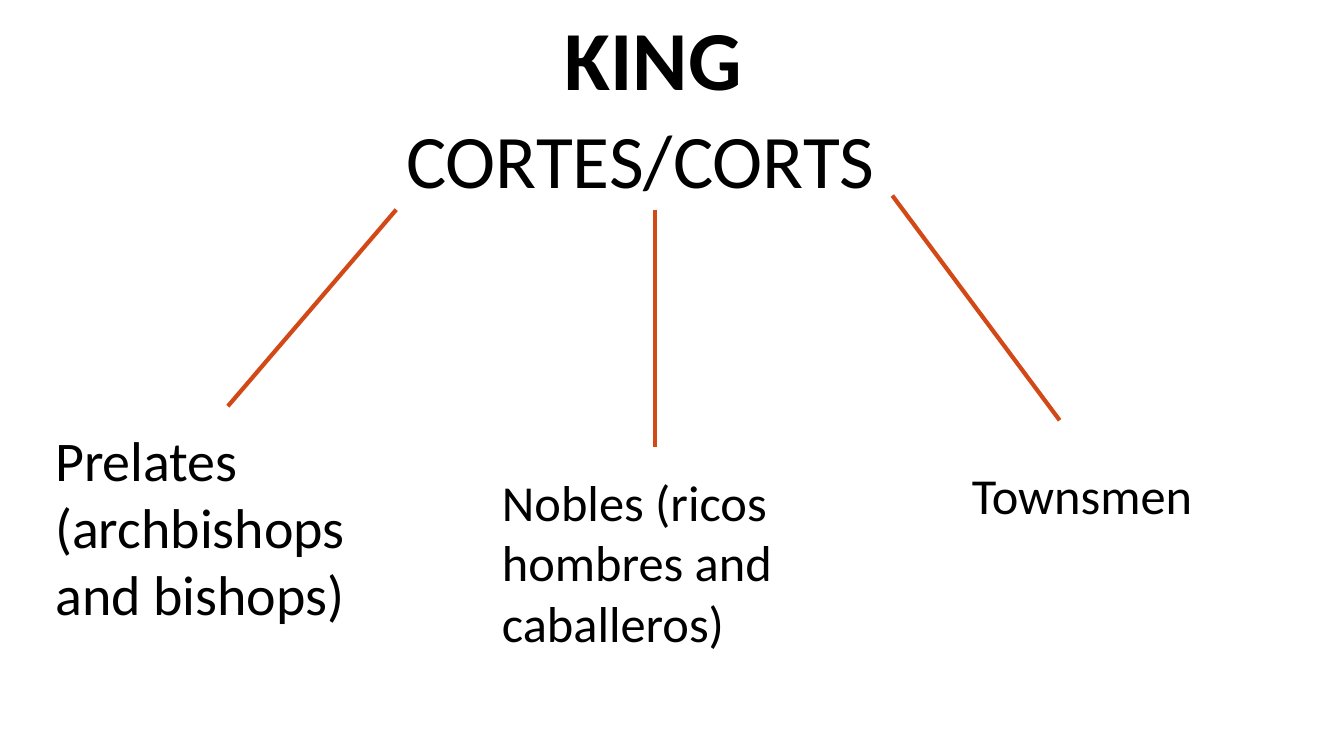
import pptx
import pptx.dml.color
import pptx.enum.shapes
import pptx.enum.text
import pptx.oxml
import pptx.oxml.ns
import pptx.util

Inches = pptx.util.Inches
BLACK = pptx.dml.color.RGBColor(0x00, 0x00, 0x00)
ORANGE = pptx.dml.color.RGBColor(0xD3, 0x48, 0x17)

BRANCHES = [
    ("Prelates (archbishops and bishops)", 40, (0.45, 4.17, 3.34, 2.12),
     (3.93, 2.08), (2.26, 4.03)),
    ("Nobles (ricos hombres and caballeros)", 36, (4.88, 4.62, 3.25, 1.92),
     (6.5, 2.08), (6.5, 4.43)),
    ("Townsmen", 36, (9.54, 4.55, 2.53, 0.71),
     (8.85, 1.94), (10.51, 4.17)),
]


def write_text(shape, text, size, bold=False, wrap=True):
    frame = shape.text_frame
    frame.text = text
    frame.word_wrap = wrap
    frame.auto_size = pptx.enum.text.MSO_AUTO_SIZE.NONE
    frame.vertical_anchor = pptx.enum.text.MSO_ANCHOR.TOP
    para = frame.paragraphs[0]
    para.alignment = pptx.enum.text.PP_ALIGN.LEFT
    para.line_spacing = 1.0
    para.space_before = pptx.util.Pt(0)
    para.font.name = "Calibri"
    para.font.size = pptx.util.Pt(size)
    para.font.bold = bold
    para.font.color.rgb = BLACK


def add_label(page, text, size, box, wrap=True):
    label = page.shapes.add_textbox(*map(Inches, box))
    write_text(label, text, size, wrap=wrap)


def add_heading(page, left, top):
    title = page.shapes.title
    title.left, title.top = Inches(left + 1.57), Inches(top)
    title.width, title.height = Inches(2.01), Inches(1.11)
    write_text(title, "KING", 60, bold=True, wrap=False)
    add_label(page, "CORTES/CORTS", 54, (left, top + 1.06, 5.15, 1.01), wrap=False)


def add_branch(page, text, size, box, start, end):
    line = page.shapes.add_connector(
        pptx.enum.shapes.MSO_CONNECTOR.STRAIGHT, *map(Inches, start + end))
    line.line.color.rgb = ORANGE
    line.line.width = pptx.util.Pt(3)
    properties = line._element.spPr
    properties.append(pptx.oxml.parse_xml(
        f"<a:effectLst {pptx.oxml.ns.nsdecls('a')}/>"))
    add_label(page, text, size, box, wrap=" " in text)


def main():
    deck = pptx.Presentation()
    deck.slide_width, deck.slide_height = Inches(13.33), Inches(7.5)
    page = deck.slides.add_slide(deck.slide_layouts.get_by_name("Title Only"))
    add_heading(page, 3.93, 0.01)
    for branch in BRANCHES:
        add_branch(page, *branch)
    deck.save("out.pptx")


if __name__ == "__main__":
    main()
